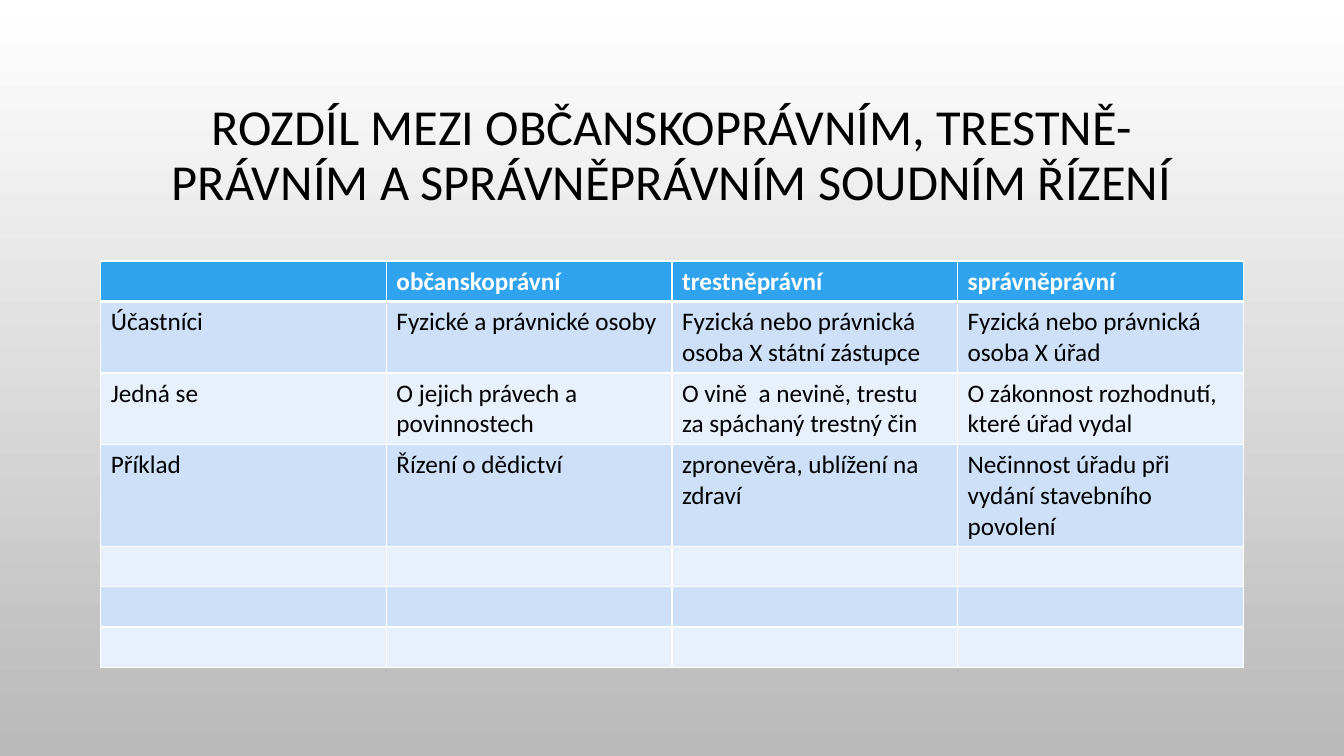
from lxml.etree import SubElement
from pptx import Presentation
from pptx.dml.color import RGBColor
from pptx.enum.text import MSO_ANCHOR, PP_ALIGN
from pptx.oxml.ns import qn
from pptx.util import Inches, Pt

BLACK = RGBColor(0x00, 0x00, 0x00)
WHITE = RGBColor(0xFF, 0xFF, 0xFF)
GREY = RGBColor(0xB9, 0xB9, 0xB9)
HEADER_BLUE = RGBColor(0x2F, 0xA3, 0xEE)
BAND_DARK = RGBColor(0xCD, 0xE0, 0xF8)
BAND_LIGHT = RGBColor(0xE8, 0xF0, 0xFC)
FONT = "Calibri"

ROWS = [
    ["", "občanskoprávní", "trestněprávní", "správněprávní"],
    ["Účastníci", "Fyzické a právnické osoby",
     "Fyzická nebo právnická osoba X státní zástupce",
     "Fyzická nebo právnická osoba X úřad"],
    ["Jedná se", "O jejich právech a povinnostech",
     "O vině  a nevině, trestu\nza spáchaný trestný čin",
     "O zákonnost rozhodnutí, které úřad vydal"],
    ["Příklad", "Řízení o dědictví", "zpronevěra, ublížení na zdraví",
     "Nečinnost úřadu při vydání stavebního povolení"],
    [""] * 4,
    [""] * 4,
    [""] * 4,
]
ROW_HEIGHTS = [0.4, 0.71, 0.71, 1.01, 0.4, 0.4, 0.4]
TABLE_WIDTH = 11.33


def style_text(paragraph, size, color, bold=False):
    for run in paragraph.runs:
        run.font.name = FONT
        run.font.size = Pt(size)
        run.font.bold = bold
        run.font.color.rgb = color


def add_cell_border(cell, side, points):
    """Draw a white line on one side (L, R, T or B); call before filling the cell."""
    line = SubElement(cell._tc.get_or_add_tcPr(), qn(f"a:ln{side}"), w=str(Pt(points)))
    SubElement(SubElement(line, qn("a:solidFill")), qn("a:srgbClr"), val=str(WHITE))


prs = Presentation()
prs.slide_width = Inches(13.33)
prs.slide_height = Inches(7.5)
slide = prs.slides.add_slide(prs.slide_layouts[6])

background = slide.background.fill
background.gradient()
background.gradient_angle = 270
for stop, color in zip(background.gradient_stops, (WHITE, GREY)):
    stop.color.rgb = color

title = slide.shapes.add_textbox(Inches(1), Inches(0.68), Inches(11.33), Inches(1.75)).text_frame
title.word_wrap = True
title.vertical_anchor = MSO_ANCHOR.MIDDLE
title.text = "ROZDÍL MEZI OBČANSKOPRÁVNÍM, TRESTNĚ- PRÁVNÍM A SPRÁVNĚPRÁVNÍM SOUDNÍM ŘÍZENÍ"
title.paragraphs[0].alignment = PP_ALIGN.CENTER
title.paragraphs[0].line_spacing = 0.9
style_text(title.paragraphs[0], 36, BLACK)

comparison = slide.shapes.add_table(
    len(ROWS), len(ROWS[0]), Inches(1), Inches(2.59),
    Inches(TABLE_WIDTH), Inches(sum(ROW_HEIGHTS))).table
for column in comparison.columns:
    column.width = Inches(TABLE_WIDTH / len(ROWS[0]))

for r, (texts, height) in enumerate(zip(ROWS, ROW_HEIGHTS)):
    comparison.rows[r].height = Inches(height)
    is_header = r == 0
    if is_header:
        row_fill = HEADER_BLUE
    else:
        row_fill = BAND_DARK if r % 2 else BAND_LIGHT
    for c, text in enumerate(texts):
        cell = comparison.cell(r, c)
        for side in "LRTB":
            thick = (is_header and side == "B") or (r == 1 and side == "T")
            add_cell_border(cell, side, 3 if thick else 1)
        cell.fill.solid()
        cell.fill.fore_color.rgb = row_fill
        cell.text_frame.text = text
        for paragraph in cell.text_frame.paragraphs:
            style_text(paragraph, 18, WHITE if is_header else BLACK, is_header)

prs.save("out.pptx")
